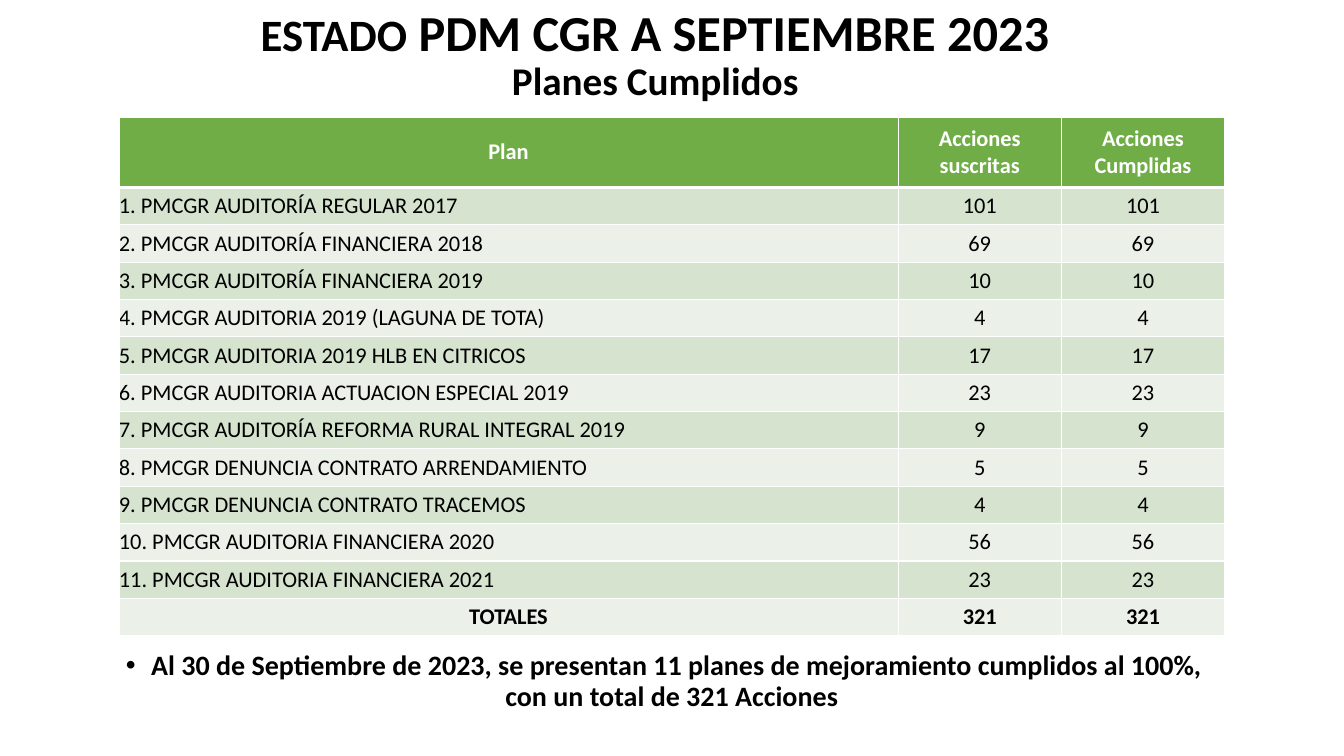
from lxml import etree
from pptx import Presentation
from pptx.dml.color import RGBColor
from pptx.enum.text import MSO_ANCHOR, PP_ALIGN
from pptx.oxml.ns import qn
from pptx.util import Pt

CENTER, LEFT = PP_ALIGN.CENTER, PP_ALIGN.LEFT
MIDDLE = MSO_ANCHOR.MIDDLE

FONT = "Calibri"
BLACK = RGBColor(0x00, 0x00, 0x00)
WHITE = RGBColor(0xFF, 0xFF, 0xFF)
HEADER_GREEN = RGBColor(0x70, 0xAD, 0x47)
BAND_DARK = RGBColor(0xD5, 0xE3, 0xCF)
BAND_LIGHT = RGBColor(0xEB, 0xF1, 0xE9)

# Boxes: left, top, width, height in points
TITLE_BOX = (-15.84, 9.36, 967.68, 61.2)
TABLE_BOX = (84.96, 83.52, 789.8, 370.8)
NOTE_BOX = (79.2, 456.48, 801.36, 61.2)

HEADER_HEIGHT = 50.4
COUNT_WIDTH = 116.6

HEADINGS = ("Plan", "Acciones suscritas", "Acciones Cumplidas")
# Every plan is fully met, so one count serves both columns
PLANS = [
    ("PMCGR AUDITORÍA REGULAR 2017", 101),
    ("PMCGR AUDITORÍA FINANCIERA 2018", 69),
    ("PMCGR AUDITORÍA FINANCIERA 2019", 10),
    ("PMCGR AUDITORIA 2019 (LAGUNA DE TOTA)", 4),
    ("PMCGR AUDITORIA 2019 HLB EN CITRICOS", 17),
    ("PMCGR AUDITORIA ACTUACION ESPECIAL 2019", 23),
    ("PMCGR AUDITORÍA REFORMA RURAL INTEGRAL 2019", 9),
    ("PMCGR DENUNCIA CONTRATO ARRENDAMIENTO", 5),
    ("PMCGR DENUNCIA CONTRATO TRACEMOS", 4),
    ("PMCGR AUDITORIA FINANCIERA 2020", 56),
    ("PMCGR AUDITORIA FINANCIERA 2021", 23),
]


def add_text(paragraph, text, *, size=16, color=BLACK, bold=False, align=CENTER):
    paragraph.alignment = align
    run = paragraph.add_run()
    run.text = text
    run.font.name = FONT
    run.font.size = Pt(size)
    run.font.bold = bold
    run.font.color.rgb = color


def add_text_box(slide, box):
    """Add a wrapped, vertically centred box and return its first paragraph."""
    frame = slide.shapes.add_textbox(*map(Pt, box)).text_frame
    frame.word_wrap = True
    frame.vertical_anchor = MIDDLE
    paragraph = frame.paragraphs[0]
    paragraph.line_spacing = 0.9
    return paragraph


def add_title(slide, box):
    paragraph = add_text_box(slide, box)
    add_text(paragraph, "ESTADO", size=32, bold=True)
    add_text(paragraph, " PDM CGR A SEPTIEMBRE 2023", size=36, bold=True)
    paragraph.add_line_break()
    add_text(paragraph, "Planes Cumplidos", size=28, bold=True)


def set_borders(cell, bottom_width):
    properties = cell._tc.get_or_add_tcPr()
    widths = {"a:lnL": 1, "a:lnR": 1, "a:lnT": 1, "a:lnB": bottom_width}
    for position, (side, width) in enumerate(widths.items()):
        line = etree.Element(qn(side), w=str(Pt(width)))
        fill = etree.SubElement(line, qn("a:solidFill"))
        etree.SubElement(fill, qn("a:srgbClr"), val=str(WHITE))
        properties.insert(position, line)


def fill_cell(cell, text, *, fill, bottom_width=1, **text_format):
    cell.margin_left = cell.margin_right = 0
    cell.margin_top = cell.margin_bottom = 0
    cell.vertical_anchor = MIDDLE
    cell.fill.solid()
    cell.fill.fore_color.rgb = fill
    set_borders(cell, bottom_width)
    add_text(cell.text_frame.paragraphs[0], text, **text_format)


def add_plan_table(slide, box):
    total = sum(count for _, count in PLANS)
    rows = [(f"{number}. {plan}", count)
            for number, (plan, count) in enumerate(PLANS, 1)]
    rows.append(("TOTALES", total))
    table = slide.shapes.add_table(len(rows) + 1, len(HEADINGS), *map(Pt, box)).table

    # Column widths and row heights
    _, _, width, height = box
    table.columns[0].width = Pt(width - 2 * COUNT_WIDTH)
    for column in (1, 2):
        table.columns[column].width = Pt(COUNT_WIDTH)
    table.rows[0].height = Pt(HEADER_HEIGHT)
    for row in range(1, len(rows) + 1):
        table.rows[row].height = Pt((height - HEADER_HEIGHT) / len(rows))

    # Header row
    for column, heading in enumerate(HEADINGS):
        fill_cell(table.cell(0, column), heading, fill=HEADER_GREEN,
                  bottom_width=3, color=WHITE, bold=True)

    # Plans and totals
    for row, (label, count) in enumerate(rows, 1):
        is_total = row == len(rows)
        band = BAND_DARK if row % 2 else BAND_LIGHT
        for column, value in enumerate((label, count, count)):
            align = LEFT if column == 0 and not is_total else CENTER
            fill_cell(table.cell(row, column), str(value), fill=band,
                      bold=is_total, align=align)


def add_note(slide, box):
    paragraph = add_text_box(slide, box)
    paragraph.space_after = Pt(6)
    properties = paragraph._p.get_or_add_pPr()
    properties.set("marL", "0")
    properties.set("indent", str(-Pt(18)))
    etree.SubElement(properties, qn("a:buFont"), typeface="Arial")
    etree.SubElement(properties, qn("a:buChar"), char="•")
    add_text(paragraph,
             "Al 30 de Septiembre de 2023, se presentan 11 planes de mejoramiento "
             "cumplidos al 100%, con un total de 321 Acciones",
             size=20, bold=True)


def main():
    presentation = Presentation()
    presentation.slide_width = Pt(960)
    presentation.slide_height = Pt(540)
    slide = presentation.slides.add_slide(presentation.slide_layouts[6])
    add_title(slide, TITLE_BOX)
    add_note(slide, NOTE_BOX)
    add_plan_table(slide, TABLE_BOX)
    presentation.save("out.pptx")


if __name__ == "__main__":
    main()
